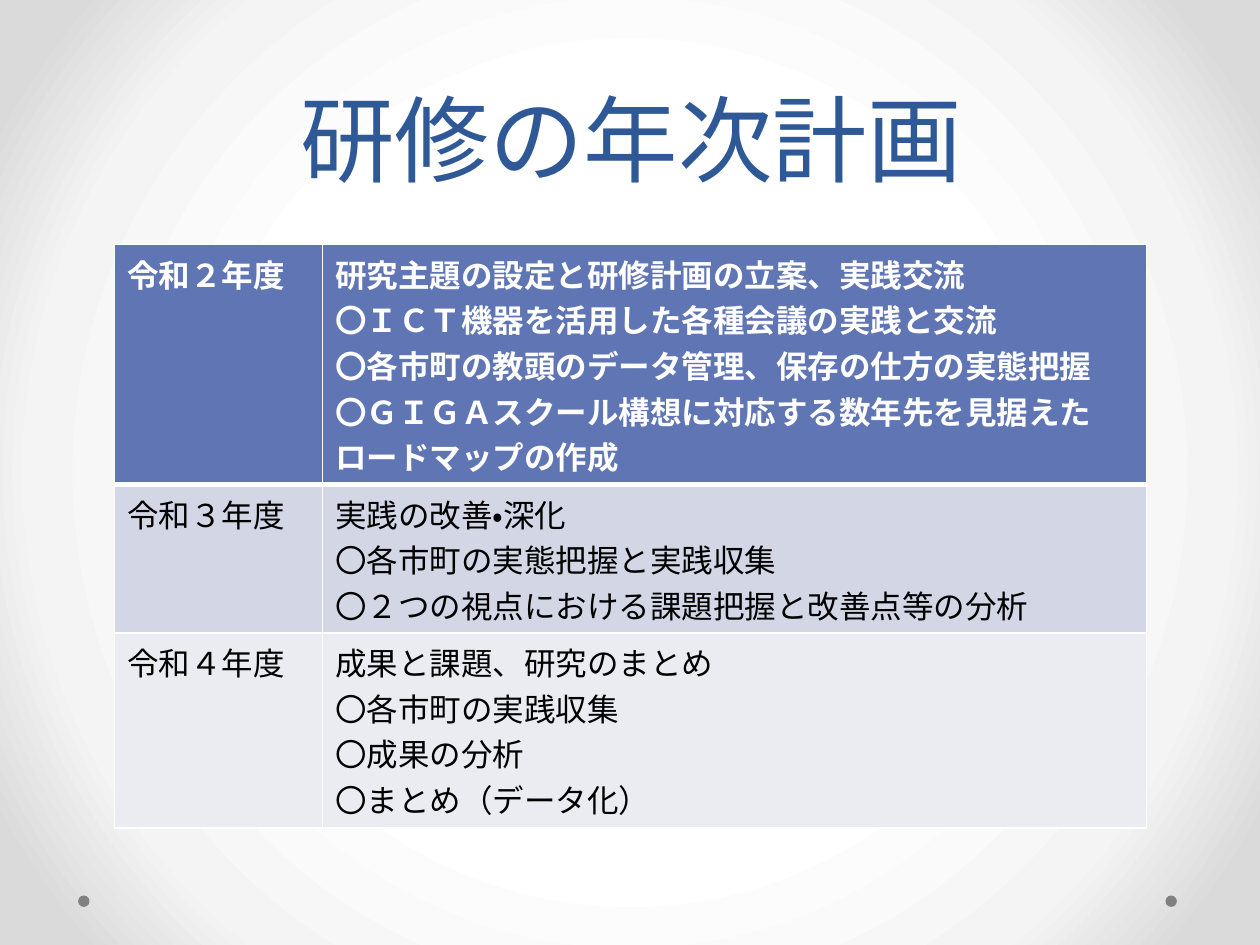
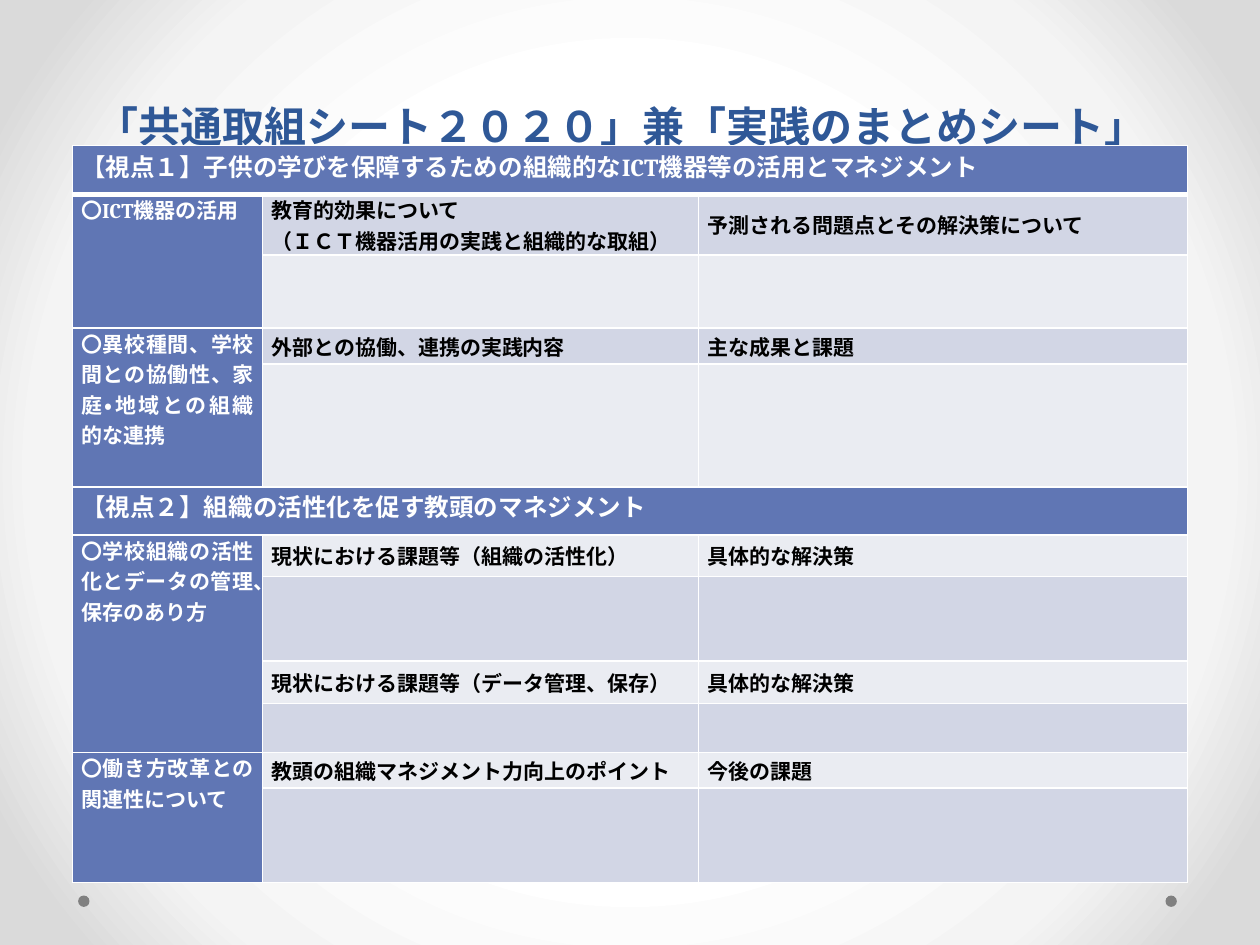
"""Build the yearly training plan and the shared practice sheet."""
from lxml.etree import SubElement
from pptx import Presentation
from pptx.dml.color import RGBColor
from pptx.enum.lang import MSO_LANGUAGE_ID
from pptx.enum.shapes import MSO_SHAPE
from pptx.enum.text import MSO_ANCHOR, PP_ALIGN
from pptx.oxml.ns import qn
from pptx.util import Pt

THEME = {
    "title": "2F5897", "dot": "808080", "blue": "6076B4", "white": "FFFFFF",
    "black": "000000", "bands": ("EAECF2", "D2D6E5"), "font": "Cambria",
    "backdrop": ((50, "FFFFFF"), (76, "F4F4F4"), (92, "DADADA")),
    "plan_title": Pt(54), "sheet_title": Pt(24), "plan_text": Pt(18),
    "banner": Pt(14), "sheet_text": Pt(12),
}

SLIDES = [
    {
        "title": "研修の年次計画",
        "title_at": (36.72, 31.68, 648, 82.8),
        "title_font": {"size": THEME["plan_title"], "bold": False},
        "corner": (65.52, 139.68),
        "columns": (118.8, 470.88),
        "heights": (137, 85, 111.5),
        "margins": (7.2, 3.6),
        "banners": {0: None},
        "label_column": False,
        "bold_body": False,
        "sizes": (THEME["plan_text"], THEME["plan_text"]),
        "align": PP_ALIGN.LEFT,
        "body_anchor": MSO_ANCHOR.TOP,
        "spans": {},
        "rows": [
            ("令和２年度", "研究主題の設定と研修計画の立案、実践交流\n"
             "〇ＩＣＴ機器を活用した各種会議の実践と交流\n"
             "〇各市町の教頭のデータ管理、保存の仕方の実態把握\n"
             "〇ＧＩＧＡスクール構想に対応する数年先を見据えた　ロードマップの作成"),
            ("令和３年度", "実践の改善・深化\n〇各市町の実態把握と実践収集\n"
             "〇２つの視点における課題把握と改善点等の分析"),
            ("令和４年度", "成果と課題、研究のまとめ\n〇各市町の実践収集\n"
             "〇成果の分析\n〇まとめ（データ化）"),
        ],
    },
    {
        "title": "「共通取組シート２０２０」兼「実践のまとめシート」",
        "title_at": (30.96, 43.2, 648, 46.8),
        "title_font": {"size": THEME["sheet_title"], "bold": True},
        "corner": (41.4, 83.2),
        "columns": (108.72, 249.12, 279.36),
        "heights": (28, 34.5, 41.75, 20.5, 70.5, 27.25, 23.75, 48.25, 24.5, 28, 20.25, 54),
        "margins": (5.04, 0),
        "banners": {0: Pt(16), 5: Pt(15)},
        "label_column": True,
        "bold_body": True,
        "sizes": (THEME["banner"], THEME["sheet_text"]),
        "align": PP_ALIGN.JUSTIFY,
        "body_anchor": MSO_ANCHOR.MIDDLE,
        "spans": {0: (1, 3), 1: (2, 1), 3: (2, 1), 5: (1, 3), 6: (4, 1), 10: (2, 1)},
        "rows": [
            ("【視点１】子供の学びを保障するための組織的なICT機器等の活用とマネジメント", "", ""),
            ("〇ICT機器の活用", "教育的効果について\n（ＩＣＴ機器活用の実践と組織的な取組）",
             "予測される問題点とその解決策について"),
            ("", "", ""),
            ("〇異校種間、学校間との協働性、家庭・地域との組織的な連携",
             "外部との協働、連携の実践内容", "主な成果と課題"),
            ("", "", ""),
            ("【視点２】組織の活性化を促す教頭のマネジメント", "", ""),
            ("〇学校組織の活性化とデータの管理、保存のあり方",
             "現状における課題等（組織の活性化）", "具体的な解決策"),
            ("", "", ""),
            ("", "現状における課題等（データ管理、保存）", "具体的な解決策"),
            ("", "", ""),
            ("〇働き方改革との関連性について", "教頭の組織マネジメント力向上のポイント", "今後の課題"),
            ("", "", ""),
        ],
    },
]


def write(frame, text, colour, para_format, font_format):
    """Write one paragraph per line of text."""
    for number, line in enumerate(text.split("\n")):
        para = frame.add_paragraph() if number else frame.paragraphs[0]
        span = para.add_run()
        span.text = line
        span.font.color.rgb = RGBColor.from_string(colour)
        shared = {"name": THEME["font"], "language_id": MSO_LANGUAGE_ID.JAPANESE}
        for target, values in ((para, para_format), (span.font, shared | font_format)):
            for name, value in values.items():
                setattr(target, name, value)


def add_borders(cell, row):
    """Draw white cell borders, heavier under the first row."""
    properties = cell._tc.get_or_add_tcPr()
    for side in ("lnL", "lnR", "lnT", "lnB"):
        heavy = (row, side) in ((0, "lnB"), (1, "lnT"))
        line = SubElement(properties, qn(f"a:{side}"), w=str(Pt(3 if heavy else 1)))
        fill = SubElement(line, qn("a:solidFill"))
        SubElement(fill, qn("a:srgbClr"), val=THEME["white"])


deck = Presentation()
deck.slide_width, deck.slide_height = Pt(720), Pt(540)

master = deck.slide_master
master.background.fill.gradient()
gradient = next(master.element.iter(qn("a:gradFill")))
for part in list(gradient):
    gradient.remove(part)
stops = SubElement(gradient, qn("a:gsLst"))
for position, colour in THEME["backdrop"]:
    stop = SubElement(stops, qn("a:gs"), pos=str(position * 1000))
    SubElement(stop, qn("a:srgbClr"), val=colour)
circle = SubElement(gradient, qn("a:path"), path="circle")
SubElement(circle, qn("a:fillToRect"), l="50000", t="50000", r="50000", b="50000")

for content in SLIDES:
    page = deck.slides.add_slide(deck.slide_layouts[6])
    for left in (666, 44.64):
        dot = page.shapes.add_shape(MSO_SHAPE.OVAL, Pt(left), Pt(511.75), Pt(6.5), Pt(6.5))
        dot.shadow.inherit = False
        dot.fill.solid()
        dot.fill.fore_color.rgb = RGBColor.from_string(THEME["dot"])
        dot.line.fill.background()

    box = page.shapes.add_textbox(*map(Pt, content["title_at"]))
    box.text_frame.word_wrap = True
    box.text_frame.vertical_anchor = MSO_ANCHOR.BOTTOM
    write(box.text_frame, content["title"], THEME["title"],
          {"alignment": PP_ALIGN.CENTER, "line_spacing": Pt(58)}, content["title_font"])

    columns, heights = content["columns"], content["heights"]
    table = page.shapes.add_table(
        len(heights), len(columns), *map(Pt, content["corner"]),
        Pt(sum(columns)), Pt(sum(heights))).table
    table.first_row = table.horz_banding = False
    for column, width in zip(table.columns, columns):
        column.width = Pt(width)
    for line, height in zip(table.rows, heights):
        line.height = Pt(height)

    side, edge = map(Pt, content["margins"])
    for row, texts in enumerate(content["rows"]):
        for column, text in enumerate(texts):
            banner = row in content["banners"]
            label = content["label_column"] and column == 0 and not banner
            blue = banner or label
            cell = table.cell(row, column)
            cell_format = {
                "margin_left": side, "margin_right": side,
                "margin_top": edge, "margin_bottom": edge,
                "vertical_anchor": MSO_ANCHOR.TOP if label else content["body_anchor"],
            }
            for name, value in cell_format.items():
                setattr(cell, name, value)
            add_borders(cell, row)
            cell.fill.solid()
            cell.fill.fore_color.rgb = RGBColor.from_string(
                THEME["blue"] if blue else THEME["bands"][row % 2])
            if text:
                write(cell.text_frame, text, THEME["white" if blue else "black"],
                      {"alignment": PP_ALIGN.LEFT if banner else content["align"],
                       "line_spacing": content["banners"].get(row)},
                      {"size": content["sizes"][0 if banner else 1],
                       "bold": blue or content["bold_body"]})
    for row, (down, across) in content["spans"].items():
        table.cell(row, 0).merge(table.cell(row + down - 1, across - 1))

deck.save("out.pptx")
